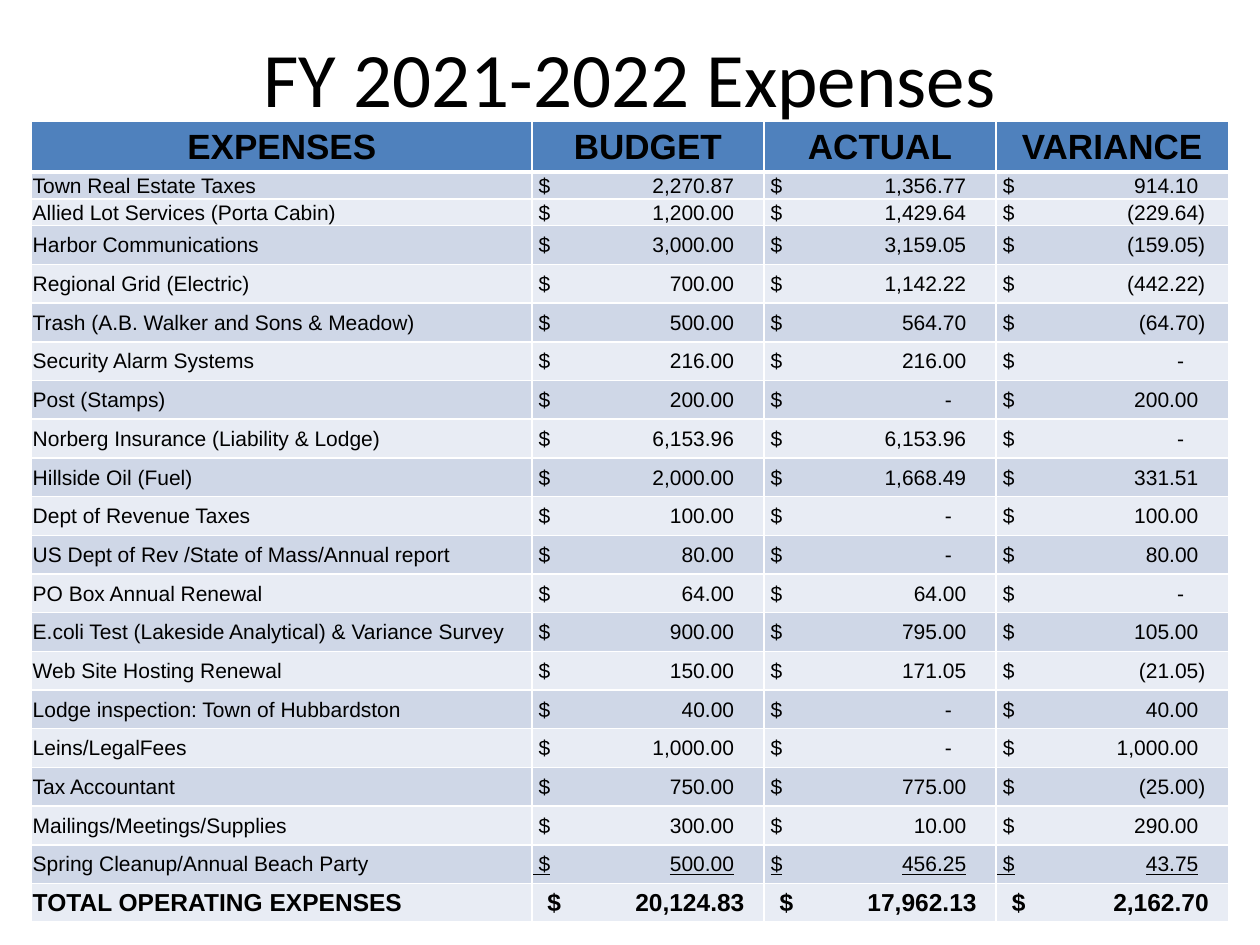
"""Builds the yearly expenses slide with its budget table."""
from lxml import etree
from pptx import Presentation, util as u
from pptx.dml.color import RGBColor
from pptx.enum import text
from pptx.oxml import ns

BLACK = RGBColor(0x00, 0x00, 0x00)
WHITE = RGBColor(0xFF, 0xFF, 0xFF)
HEADER_BLUE = RGBColor(0x4F, 0x81, 0xBD)
BAND_DARK = RGBColor(0xCF, 0xD7, 0xE7)
BAND_LIGHT = RGBColor(0xE8, 0xEC, 0xF4)

HEADINGS = ("EXPENSES", "BUDGET", "ACTUAL", "VARIANCE")
EXPENSES = [
    ("Town Real Estate Taxes", "2,270.87", "1,356.77", "914.10"),
    ("Allied Lot Services (Porta Cabin)", "1,200.00", "1,429.64", "(229.64)"),
    ("Harbor Communications", "3,000.00", "3,159.05", "(159.05)"),
    ("Regional Grid (Electric)", "700.00", "1,142.22", "(442.22)"),
    ("Trash (A.B. Walker and Sons & Meadow)", "500.00", "564.70", "(64.70)"),
    ("Security Alarm Systems", "216.00", "216.00", "-"),
    ("Post (Stamps)", "200.00", "-", "200.00"),
    ("Norberg Insurance (Liability & Lodge)", "6,153.96", "6,153.96", "-"),
    ("Hillside Oil (Fuel)", "2,000.00", "1,668.49", "331.51"),
    ("Dept of Revenue Taxes", "100.00", "-", "100.00"),
    ("US Dept of Rev /State of Mass/Annual report", "80.00", "-", "80.00"),
    ("PO Box Annual Renewal", "64.00", "64.00", "-"),
    ("E.coli Test (Lakeside Analytical) & Variance Survey", "900.00", "795.00", "105.00"),
    ("Web Site Hosting Renewal", "150.00", "171.05", "(21.05)"),
    ("Lodge inspection: Town of Hubbardston", "40.00", "-", "40.00"),
    ("Leins/LegalFees", "1,000.00", "-", "1,000.00"),
    ("Tax Accountant", "750.00", "775.00", "(25.00)"),
    ("Mailings/Meetings/Supplies", "300.00", "10.00", "290.00"),
    ("Spring Cleanup/Annual Beach Party", "500.00", "456.25", "43.75"),
]
TOTALS = ("TOTAL OPERATING EXPENSES", "20,124.83", "17,962.13", "2,162.70")


def write_text(para, words, *, size=12, font="Arial", bold=False,
               underline=False, align=text.PP_ALIGN.LEFT):
    para.alignment = align
    span = para.add_run()
    span.text = words
    span.font.size = u.Pt(size)
    span.font.name = font
    span.font.bold = bold
    span.font.underline = underline
    span.font.color.rgb = BLACK


def add_right_tab(para, position):
    tabs = etree.SubElement(para._p.get_or_add_pPr(), ns.qn("a:tabLst"))
    etree.SubElement(tabs, ns.qn("a:tab"), pos=str(u.Cm(position)), algn="r")


def tab_position(amount):
    if amount == "-":
        return 3.77
    return 4.2 if amount.startswith("(") else 4.06


class ExpenseSlide:
    def __init__(self, deck):
        self.page = deck.slides.add_slide(deck.slide_layouts[5])

    def title(self, words):
        box = self.page.shapes.title
        box.left, box.top = u.Cm(1.27), u.Cm(0.76)
        box.width, box.height = u.Cm(22.86), u.Cm(1.57)
        frame = box.text_frame
        frame.auto_size = text.MSO_AUTO_SIZE.NONE
        frame.vertical_anchor = text.MSO_ANCHOR.MIDDLE
        write_text(frame.paragraphs[0], words, size=44, font="Calibri",
                   align=text.PP_ALIGN.CENTER)

    def cell(self, row, column, fill):
        cell = self.grid.cell(row, column)
        cell.margin_left = cell.margin_right = cell.margin_top = u.Cm(0.02)
        cell.margin_bottom = 0
        cell.vertical_anchor = text.MSO_ANCHOR.MIDDLE
        properties = cell._tc.get_or_add_tcPr()
        for side in ("lnL", "lnR", "lnT", "lnB"):
            heavy = (row == 0 and side == "lnB") or (row == 1 and side == "lnT")
            line = etree.SubElement(properties, ns.qn(f"a:{side}"),
                                    w=str(u.Pt(3 if heavy else 1)))
            solid = etree.SubElement(line, ns.qn("a:solidFill"))
            etree.SubElement(solid, ns.qn("a:srgbClr"), val=str(WHITE))
        cell.fill.solid()
        cell.fill.fore_color.rgb = fill
        return cell

    def header_row(self):
        for column, heading in enumerate(HEADINGS):
            para = self.cell(0, column, HEADER_BLUE).text_frame.paragraphs[0]
            write_text(para, heading, size=20, bold=True,
                       align=text.PP_ALIGN.CENTER)

    def amount_row(self, row, values, total=False, underline=False):
        fill = BAND_DARK if row % 2 else BAND_LIGHT
        style = {"size": 14 if total else 12, "bold": total}
        label, *amounts = values
        write_text(self.cell(row, 0, fill).text_frame.paragraphs[0], label, **style)
        for column, amount in enumerate(amounts, 1):
            cell = self.cell(row, column, fill)
            if total:
                cell.margin_left = u.Cm(0.18)
            para = cell.text_frame.paragraphs[0]
            write_text(para, " ", underline=underline and column != 2, **style)
            write_text(para, f"$\t{amount}", underline=underline, **style)
            add_right_tab(para, 4.11 if total else tab_position(amount))

    def table(self):
        widths = [10.08] + [4.68] * 3
        heights = [1.02] + [0.54] * 2 + [0.78] * (len(EXPENSES) - 1)
        frame = self.page.shapes.add_table(
            len(heights), len(widths), u.Cm(0.64), u.Cm(2.45),
            u.Cm(sum(widths)), u.Cm(sum(heights)))
        self.grid = frame.table
        for column, width in zip(self.grid.columns, widths):
            column.width = u.Cm(width)
        for row, height in zip(self.grid.rows, heights):
            row.height = u.Cm(height)
        self.header_row()
        for row, values in enumerate(EXPENSES, 1):
            self.amount_row(row, values, underline=row == len(EXPENSES))
        self.amount_row(len(EXPENSES) + 1, TOTALS, total=True)


def main():
    deck = Presentation()
    deck.slide_width, deck.slide_height = u.Cm(25.4), u.Cm(19.05)
    slide = ExpenseSlide(deck)
    slide.title("FY 2021-2022 Expenses")
    slide.table()
    deck.save("out.pptx")


if __name__ == "__main__":
    main()
